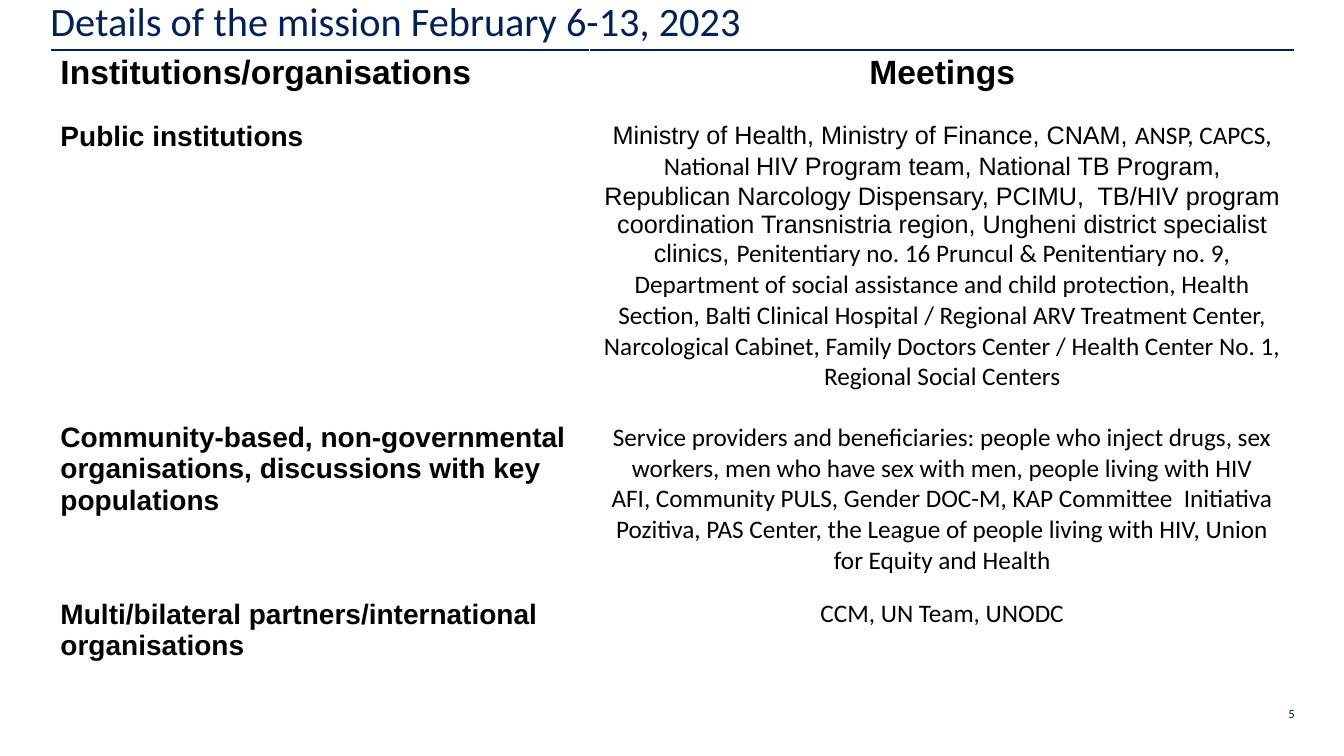
"""Builds the slide that lists the meetings of the February 2023 mission."""
from lxml.etree import SubElement
from pptx import Presentation
from pptx.dml.color import RGBColor
from pptx.enum.text import MSO_ANCHOR, PP_ALIGN
from pptx.oxml.ns import qn
from pptx.util import Inches, Pt

COLORS = {"navy": "00205C", "black": "000000"}
HEADING, BODY = "Arial", "Calibri"
LEFT, WIDTH = 0.5, 12.33
COLUMN_WIDTHS = [5.35, 6.99]
ROW_HEIGHTS = [0.66, 2.99, 1.75, 0.91]
HEADERS = ["Institutions/organisations", "Meetings"]
MEETINGS = [
    ("Public institutions", [[
        ("Ministry of Health, Ministry of Finance, CNAM, ", HEADING),
        ("ANSP, CAPCS, National ", BODY),
        ("HIV Program team, National TB Program, Republican Narcology Dispensary, "
         "PCIMU,  TB/HIV program coordination Transnistria region, Ungheni district "
         "specialist clinics, ", HEADING),
        ("Penitentiary no. 16 Pruncul & Penitentiary no. 9, Department of social "
         "assistance and child protection, Health Section, Balti Clinical Hospital / "
         "Regional ARV Treatment Center, Narcological Cabinet, Family Doctors Center / "
         "Health Center No. 1, Regional Social Centers", BODY),
    ]]),
    ("Community-based, non-governmental  organisations, discussions with key populations", [
        [("Service providers and beneficiaries: people who inject drugs, sex workers, "
          "men who have sex with men, people living with HIV", BODY)],
        [("AFI, Community PULS, Gender DOC-M, KAP Committee  Initiativa Pozitiva, "
          "PAS Center, the League of people living with HIV, Union for Equity and "
          "Health", BODY)],
    ]),
    ("Multi/bilateral partners/international organisations",
     [[("CCM, UN Team, UNODC", BODY)]]),
]


def style_font(font, size, name, color, bold=False):
    """Set size, typeface, colour and weight of a font."""
    font.size, font.name, font.bold = Pt(size), name, bold
    font.color.rgb = RGBColor.from_string(COLORS[color])


def clear_margins(frame):
    """Remove all insets of a text frame."""
    frame.margin_left = frame.margin_right = frame.margin_top = frame.margin_bottom = 0


def add_title(slide, text):
    """Place and format the title placeholder."""
    title = slide.shapes.title
    title.left, title.top = Inches(LEFT), Inches(0)
    title.width, title.height = Inches(WIDTH), Inches(0.46)
    frame = title.text_frame
    clear_margins(frame)
    frame.vertical_anchor = MSO_ANCHOR.MIDDLE
    frame.text = text
    heading = frame.paragraphs[0]
    heading.alignment, heading.line_spacing = PP_ALIGN.LEFT, 0.9
    style_font(heading.font, 28.8, BODY, "navy")


def add_rule(slide, top):
    """Draw the line below the title."""
    rule = slide.shapes.add_connector(
        1, Inches(LEFT), Inches(top), Inches(LEFT + WIDTH), Inches(top))
    rule.line.color.rgb = RGBColor.from_string(COLORS["navy"])
    rule.line.width = Pt(1.5)
    SubElement(rule._element.spPr, qn("a:effectLst"))


def add_page_number(slide, number):
    """Add the page number in the lower right corner."""
    frame = slide.shapes.add_textbox(
        Inches(12.42), Inches(7), Inches(0.42), Inches(0.35)).text_frame
    clear_margins(frame)
    frame.word_wrap = True
    frame.text = number
    page = frame.paragraphs[0]
    page.alignment = PP_ALIGN.RIGHT
    style_font(page.font, 9, BODY, "navy")


def fill_cell(cell, paragraphs, size, bold, alignment):
    """Write paragraphs of (text, typeface) runs into a table cell."""
    cell.fill.background()
    cell.margin_left = cell.margin_right = Inches(0.1)
    cell.margin_top = cell.margin_bottom = Inches(0.1)
    frame = cell.text_frame
    for index, runs in enumerate(paragraphs):
        paragraph = frame.add_paragraph() if index else frame.paragraphs[0]
        paragraph.alignment = alignment
        style_font(paragraph.font, size, runs[0][1], "black", bold)
        for text, name in runs:
            run = paragraph.add_run()
            run.text = text
            if len(runs) > 1:
                style_font(run.font, size, name, "black", bold)


def add_meetings_table(slide):
    """Add the table of institutions and their meetings."""
    table = slide.shapes.add_table(
        len(ROW_HEIGHTS), len(COLUMN_WIDTHS), Inches(LEFT), Inches(0.44),
        Inches(sum(COLUMN_WIDTHS)), Inches(sum(ROW_HEIGHTS))).table
    table.first_row = table.horz_banding = False
    for column, width in zip(table.columns, COLUMN_WIDTHS):
        column.width = Inches(width)
    for row, height in zip(table.rows, ROW_HEIGHTS):
        row.height = Inches(height)
    for column, (header, alignment) in enumerate(
            zip(HEADERS, [PP_ALIGN.LEFT, PP_ALIGN.CENTER])):
        fill_cell(table.cell(0, column), [[(header, HEADING)]], 24, True, alignment)
    for row, (institution, meetings) in enumerate(MEETINGS, start=1):
        fill_cell(table.cell(row, 0), [[(institution, HEADING)]], 20, True, PP_ALIGN.LEFT)
        fill_cell(table.cell(row, 1), meetings, 18, False, PP_ALIGN.CENTER)


def main():
    """Build and save the slide."""
    presentation = Presentation()
    presentation.slide_width, presentation.slide_height = Inches(13.33), Inches(7.5)
    slide = presentation.slides.add_slide(presentation.slide_layouts[5])
    add_rule(slide, 0.5)
    add_title(slide, "Details of the mission February 6-13, 2023")
    add_page_number(slide, "5")
    add_meetings_table(slide)
    presentation.save("out.pptx")


if __name__ == "__main__":
    main()
